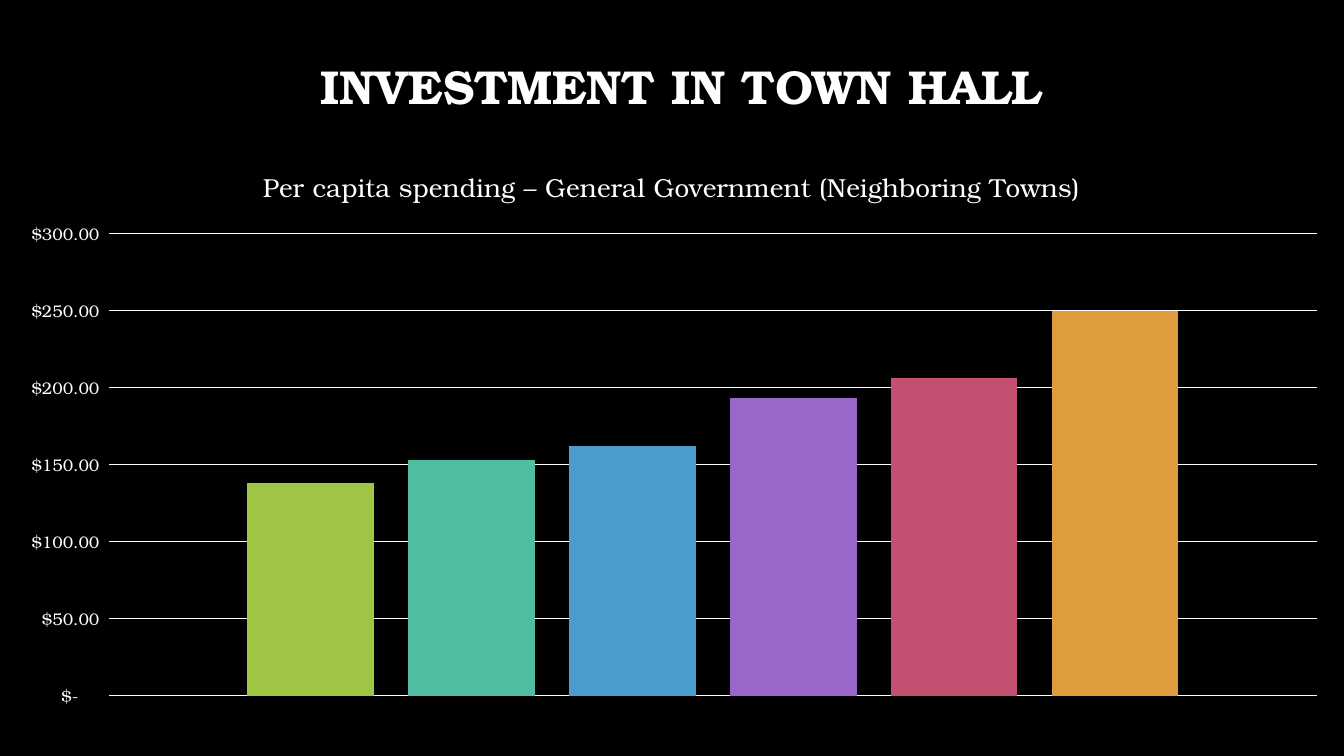
from dataclasses import dataclass

from lxml import etree
from pptx import Presentation
from pptx import util as u
from pptx.chart.data import CategoryChartData
from pptx.dml.color import RGBColor
from pptx.enum import chart as ch, text
from pptx.oxml import parse_xml
from pptx.oxml.ns import nsdecls


@dataclass(frozen=True)
class Theme:
    font: str = "TeX Gyre Bonum"
    back: str = "000000"
    ink: str = "FFFFFF"
    title: float = 34
    chart_title: float = 18.6
    axis: float = 12
    base: float = 10


THEME = Theme()
CURRENCY = '_("$"* #,##0.00_);_("$"* \\(#,##0.00\\);_("$"* "-"??_);_(@_)'
# Spending per head in dollars, bar colour
SPENDING = [
    (138, "9EC544"),
    (153, "50BEA3"),
    (162, "4A9CCC"),
    (193, "9A66CA"),
    (206, "C54F71"),
    (250, "DE9C3C"),
]


def rgb(value):
    return RGBColor.from_string(value)


def set_font(font, size, bold=False):
    font.name, font.size, font.bold = THEME.font, u.Pt(size), bold
    font.color.rgb = rgb(THEME.ink)


def write(tf, words, size, bold=False, align=text.PP_ALIGN.CENTER, spacing=None):
    p = tf.paragraphs[0]
    p.alignment = align
    if spacing:
        p.line_spacing = spacing
    r = p.add_run()
    r.text = words
    set_font(r.font, size, bold)


def set_layout(parent, before, inner=False, **fractions):
    """Place a chart part by fractions of the chart area."""
    for old in parent.findall("{*}layout"):
        parent.remove(old)
    layout = parse_xml(f"<c:layout {nsdecls('c')}><c:manualLayout/></c:layout>")
    manual = layout[0]
    settings = {"layoutTarget": "inner"} if inner else {}
    settings.update(xMode="edge", yMode="edge", **fractions)
    for name, value in settings.items():
        tag = etree.QName(manual.nsmap["c"], name)
        etree.SubElement(manual, tag).set("val", str(value))
    parent.find("{*}" + before).addprevious(layout)


def add_title(s, left, top, width, height):
    sp = s.shapes.title
    sp.left, sp.top, sp.width, sp.height = map(u.Inches, (left, top, width, height))
    tf = sp.text_frame
    tf.word_wrap = True
    tf.vertical_anchor = text.MSO_ANCHOR.MIDDLE
    write(tf, "INVESTMENT IN TOWN HALL", THEME.title, bold=True, spacing=0.9)


def add_spending_chart(s, left, top, width, height):
    data = CategoryChartData()
    data.categories = [""]
    for dollars, _ in SPENDING:
        data.add_series("", [dollars])
    box = map(u.Inches, (left, top, width, height))
    chart = s.shapes.add_chart(ch.XL_CHART_TYPE.COLUMN_CLUSTERED, *box, data).chart
    set_font(chart.font, THEME.base)
    chart.has_legend = False

    # Heading
    write(chart.chart_title.text_frame,
          "Per capita spending – General Government (Neighboring Towns)",
          THEME.chart_title)
    chart.chart_title.include_in_layout = False
    set_layout(chart.chart_title._element, "overlay", x=0.192, y=0.024)

    # Bars
    plot = chart.plots[0]
    plot.gap_width, plot.overlap, plot.vary_by_categories = 219, -27, False
    for series, (_, colour) in zip(plot.series, SPENDING):
        series.format.fill.solid()
        series.format.fill.fore_color.rgb = rgb(colour)
    set_layout(chart._chartSpace.chart.plotArea, "barChart", inner=True,
               x=0.081, y=0.142, w=0.899, h=0.759)

    # Axes
    chart.category_axis.visible = False
    axis = chart.value_axis
    axis.minimum_scale, axis.maximum_scale, axis.major_unit = 0, 300, 50
    axis.major_tick_mark = axis.minor_tick_mark = ch.XL_TICK_MARK.NONE
    axis.format.line.fill.background()
    grid = axis.major_gridlines.format.line
    grid.width = u.Pt(0.75)
    grid.color.rgb = rgb(THEME.ink)
    labels = axis.tick_labels
    labels.number_format, labels.number_format_is_linked = CURRENCY, False
    set_font(labels.font, THEME.axis)


def main():
    prs = Presentation()
    prs.slide_width, prs.slide_height = u.Inches(13.33), u.Inches(7.5)
    s = prs.slides.add_slide(prs.slide_layouts[5])
    s.background.fill.solid()
    s.background.fill.fore_color.rgb = rgb(THEME.back)
    add_title(s, 1.1, 0.16, 11.32, 1.45)
    add_spending_chart(s, 0, 1.46, 13.33, 6.04)
    prs.save("out.pptx")


if __name__ == "__main__":
    main()
